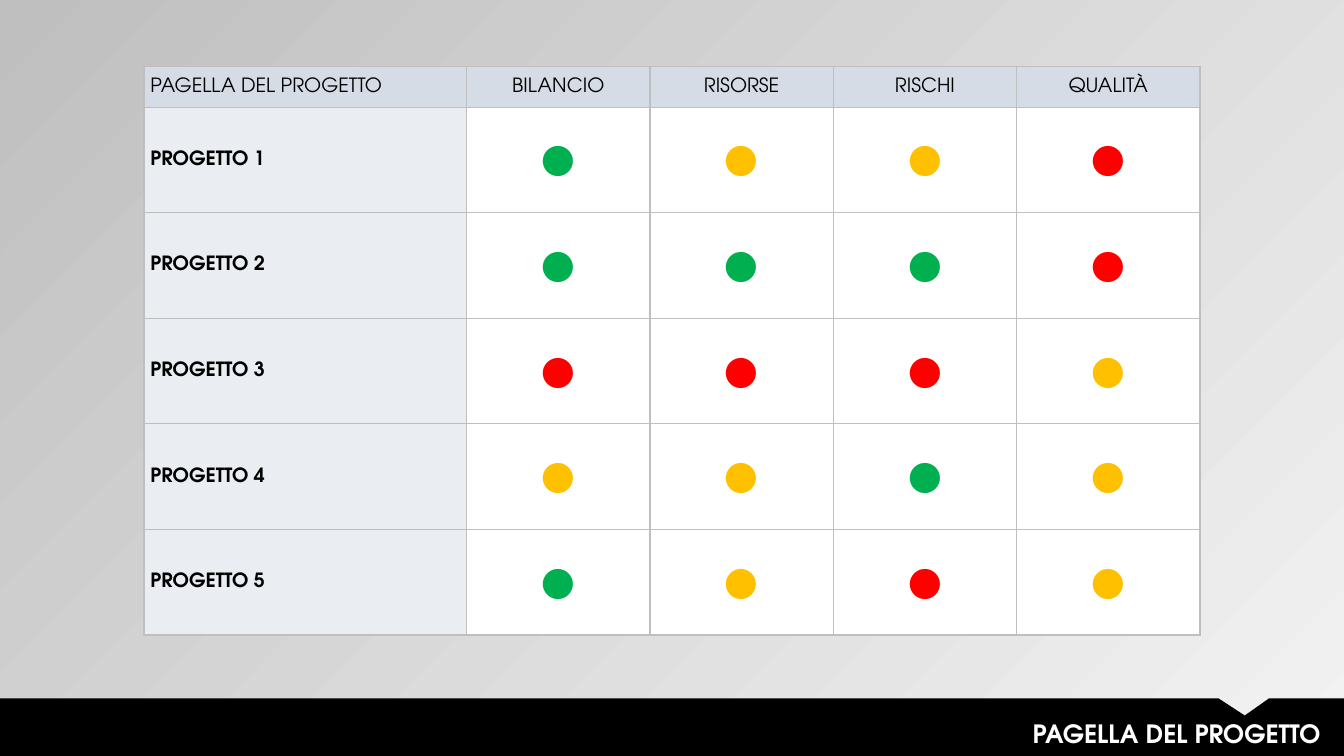
import pptx
import pptx.util
import pptx.dml.color
import pptx.enum.text
import pptx.oxml
import pptx.oxml.ns

Cm = pptx.util.Cm
ALIGN = pptx.enum.text.PP_ALIGN
COLORS = {
    "black": "000000", "white": "FFFFFF", "border": "BFBFBF",
    "header": "D6DCE5", "label": "EAEEF3", "light": "F2F2F2",
    "G": "00B050", "Y": "FFC000", "R": "FF0000",
}
FONT = "TeX Gyre Adventor"
HEADERS = ["PAGELLA DEL PROGETTO", "BILANCIO", "RISORSE", "RISCHI", "QUALITÀ"]
RATINGS = ["GYYR", "GGGR", "RRRY", "YYGY", "GYRY"]


def rgb(name):
    return pptx.dml.color.RGBColor.from_string(COLORS[name])


def write(tf, text, color, align, **fmt):
    p = tf.paragraphs[0]
    p.alignment = align
    r = p.add_run()
    r.text = text
    r.font.color.rgb = rgb(color)
    for key, value in {"name": FONT, **fmt}.items():
        setattr(r.font, key, value)


prs = pptx.Presentation()
prs.slide_width, prs.slide_height = Cm(33.87), Cm(19.05)
s = prs.slides.add_slide(prs.slide_layouts[6])

bg = s.background.fill
bg.gradient()
bg.gradient_angle = 135
for stop, name in zip(bg.gradient_stops, ["light", "border"]):
    stop.color.rgb = rgb(name)

outline = [(30.71, 17.6), (31.37, 18.03), (31.98, 17.6), (33.87, 17.6), (33.87, 19.05), (0, 19.05)]
builder = s.shapes.build_freeform(0, Cm(17.6))
builder.add_line_segments([(Cm(x), Cm(y)) for x, y in outline], close=True)
sp = builder.convert_to_shape()
sp.shadow.inherit = False
sp.fill.solid()
sp.fill.fore_color.rgb = rgb("black")
sp.line.fill.background()

widths = [8.13] + [4.62] * 4
heights = [1.02] + [2.66] * 5
table = s.shapes.add_table(
    len(heights), len(widths), Cm(3.63), Cm(1.68), Cm(sum(widths)), Cm(sum(heights))
).table
table.first_row = table.horz_banding = False
for col, width in zip(table.columns, widths):
    col.width = Cm(width)
for row, height in zip(table.rows, heights):
    row.height = Cm(height)

rows = [HEADERS] + [[f"PROGETTO {n}", *marks] for n, marks in enumerate(RATINGS, 1)]
cell_format = {
    "margin_left": Cm(0.16), "margin_right": Cm(0.16), "margin_top": 0, "margin_bottom": 0,
    "vertical_anchor": pptx.enum.text.MSO_ANCHOR.MIDDLE,
}
for i, values in enumerate(rows):
    for j, value in enumerate(values):
        cell = table.cell(i, j)
        for key, setting in cell_format.items():
            setattr(cell, key, setting)
        for side in ["lnL", "lnR", "lnT", "lnB"]:
            cell._tc.get_or_add_tcPr().append(pptx.oxml.parse_xml(
                f'<a:{side} {pptx.oxml.ns.nsdecls("a")} w="12700"><a:solidFill>'
                f'<a:srgbClr val="{COLORS["border"]}"/></a:solidFill></a:{side}>'
            ))
        cell.fill.solid()
        cell.fill.fore_color.rgb = rgb("header" if i == 0 else "label" if j == 0 else "white")
        align = ALIGN.CENTER if j else ALIGN.LEFT
        if i and j:
            write(cell.text_frame, "•", value, align, size=pptx.util.Pt(60), bold=False)
        else:
            write(cell.text_frame, value, "black", align, size=pptx.util.Pt(14), bold=i > 0)

tf = s.shapes.add_textbox(Cm(10.52), Cm(17.98), Cm(23.01), Cm(1.02)).text_frame
tf.word_wrap = True
tf.auto_size = pptx.enum.text.MSO_AUTO_SIZE.SHAPE_TO_FIT_TEXT
write(tf, "PAGELLA DEL PROGETTO", "white", ALIGN.RIGHT, size=pptx.util.Pt(18), bold=True)

prs.save("out.pptx")
